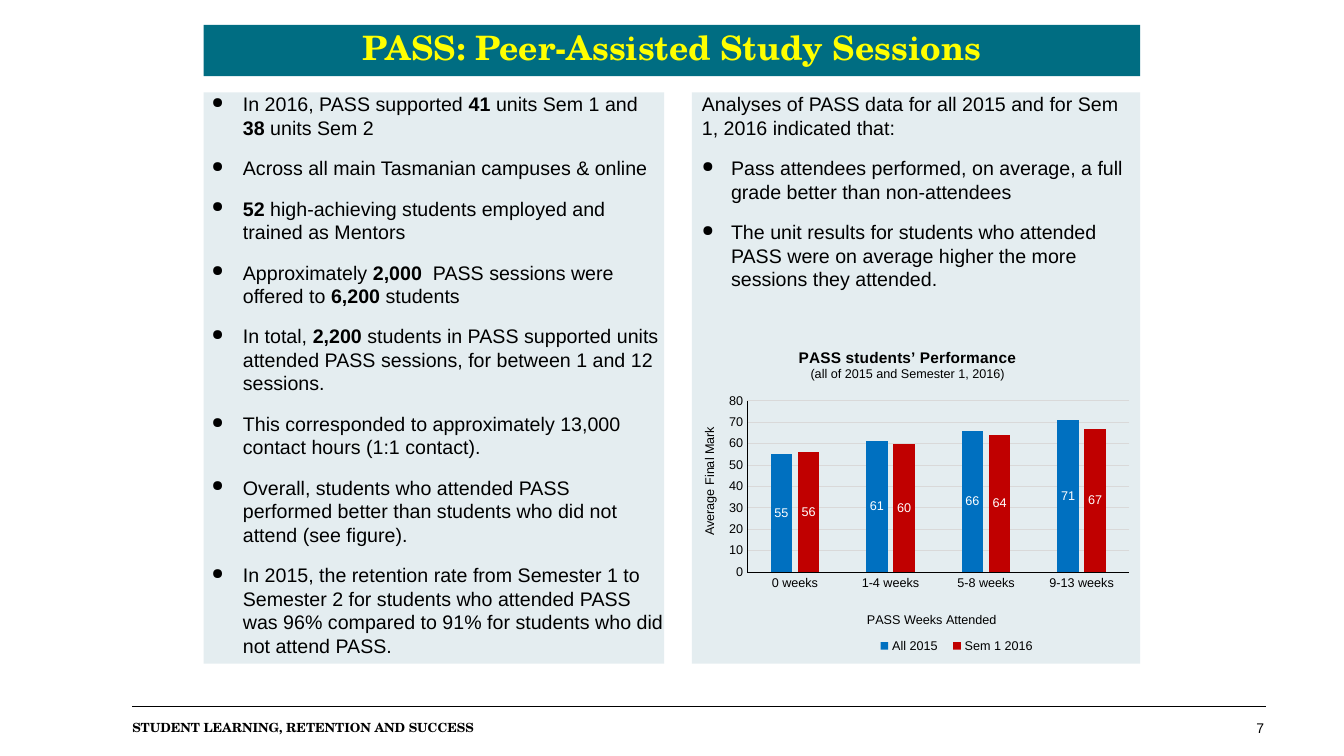
from lxml import etree
from pptx import Presentation
from pptx.chart.data import CategoryChartData
from pptx.dml.color import RGBColor
from pptx.enum import chart as ch, shapes, text
from pptx.oxml import parse_xml
from pptx.oxml.ns import nsdecls, qn
from pptx.util import Pt

TITLE = "PASS: Peer-Assisted Study Sessions"
# Bold parts stand between asterisks; a vertical tab is a line break.
LEFT = [
    "In 2016, PASS supported *41* units Sem 1 and \v*38* units Sem 2",
    "Across all main Tasmanian campuses & online",
    "*52* high-achieving students employed and trained as Mentors",
    "Approximately *2,000*  PASS sessions were offered to *6,200* students",
    "In total, *2,200* students in PASS supported units attended PASS sessions, "
    "for between 1 and 12 sessions.",
    "This corresponded to approximately 13,000 contact hours (1:1 contact).",
    "Overall, students who attended PASS \vperformed better than students who did not "
    "attend (see figure).",
    "In 2015, the retention rate from Semester 1 to Semester 2 for students who attended "
    "PASS was 96% compared to 91% for students who did not attend PASS.",
]
INTRO = "Analyses of PASS data for all 2015 and for Sem 1, 2016 indicated that:"
RIGHT = [
    "Pass attendees performed, on average, a full grade better than non-attendees",
    "The unit results for students who attended PASS were on average higher the more "
    "sessions they attended.",
]
FOOTER, PAGE = "STUDENT LEARNING, RETENTION AND SUCCESS", "7"
CHART_TITLE = ("PASS students’ Performance", "(all of 2015 and Semester 1, 2016)")
X_TITLE, Y_TITLE = "PASS Weeks Attended", "Average Final Mark"
WEEKS = ["0 weeks", "1-4 weeks", "5-8 weeks", "9-13 weeks"]
MARKS = {"All 2015": (55, 61, 66, 71), "Sem 1 2016": (56, 60, 64, 67)}

THEME = {
    "sans": "Arial", "serif": "TeX Gyre Schola",
    "black": "000000", "white": "FFFFFF", "yellow": "FFFF00", "teal": "006D82",
    "panel": "E4EDF0", "grid": "D9D9D9", "bars": ("0070C0", "C00000"),
    "title": 24, "body": 14, "chart_title": 11, "page": 10, "small": 9,
}
SLIDE_W, SLIDE_H = 960, 540
LEFT_X, RIGHT_X, EDGE = 145.5, 494.2, 814.4
PANEL_TOP, PANEL_H, LEFT_W = 66, 408, 329
RULE_X, RULE_END, RULE_Y = 94.5, 904.5, 504.5
CHART_BOX = (486, 236, 329, 239.8)
# Shares of the chart's width and height: left, top, then width and height
LAYOUTS = {"plot": (0.145, 0.21, 0.83, 0.51), "legend": (0.41, 0.9, 0.38, 0.08),
           "title": (0.25, 0.04), "x": (0.4, 0.83), "y": (0.04, 0.28)}


def color(name):
    return RGBColor.from_string(THEME.get(name, name))


def style(font, size="small", ink="black", face="sans", bold=False):
    values = {"name": THEME[face], "size": Pt(THEME[size]), "bold": bold}
    for key, value in values.items():
        setattr(font, key, value)
    font.color.rgb = color(ink)


def outline(line, ink, width=0.75):
    line.color.rgb = color(ink)
    line.width = Pt(width)


def box(slide, x, y, w, h, fill=None, anchor=text.MSO_ANCHOR.TOP):
    """Add a text area without margins, filled if a colour is given."""
    area = [Pt(v) for v in (x, y, w, h)]
    if fill:
        sp = slide.shapes.add_shape(shapes.MSO_SHAPE.RECTANGLE, *area)
        sp.shadow.inherit = False
        sp.fill.solid()
        sp.fill.fore_color.rgb = color(fill)
        sp.line.fill.background()
    else:
        sp = slide.shapes.add_textbox(*area)
    tf = sp.text_frame
    values = {"word_wrap": True, "vertical_anchor": anchor, "margin_left": 0,
              "margin_right": 0, "margin_top": 0, "margin_bottom": 0}
    for key, value in values.items():
        setattr(tf, key, value)
    return tf


def write(p, words, align=text.PP_ALIGN.LEFT, **look):
    p.alignment = align
    for i, part in enumerate(words.split("*")):
        for j, piece in enumerate(part.split("\v")):
            if j:
                p.add_line_break()
            if piece:
                r = p.add_run()
                r.text = piece
                style(r.font, **{"bold": i % 2 == 1, **look})


def write_panel(tf, items, hang, intro=None):
    """Fill a panel with bullets, after an unbulleted paragraph if there is one."""
    for i, item in enumerate(([intro] if intro else []) + items):
        p = tf.paragraphs[0] if i == 0 else tf.add_paragraph()
        bulleted = item is not intro
        p.space_before = Pt(12 if i else 0)
        pPr = p._p.get_or_add_pPr()
        pPr.set("marL", str(Pt(28 if bulleted else 7.2)))
        pPr.set("indent", str(Pt(-hang if bulleted else 0)))
        if bulleted:
            etree.SubElement(pPr, qn("a:buSzPct")).set("val", "78000")
            etree.SubElement(pPr, qn("a:buChar")).set("char", "●")
        write(p, item, size="body")


def place(el, key, after=None):
    """Give a chart part a manual layout, behind its child named by after."""
    for old in el.findall(qn("c:layout")):
        el.remove(old)
    tags = ["xMode", "yMode"] + ["x", "y", "w", "h"][:len(LAYOUTS[key])]
    values = ["edge", "edge", *LAYOUTS[key]]
    if key == "plot":
        tags, values = ["layoutTarget"] + tags, ["inner"] + values
    inner = "".join(f'<c:{t} val="{v}"/>' for t, v in zip(tags, values))
    layout = parse_xml(f'<c:layout {nsdecls("c")}><c:manualLayout>{inner}'
                       '</c:manualLayout></c:layout>')
    if after:
        el.find(qn(after)).addnext(layout)
    else:
        el.insert(0, layout)


def add_marks_chart(slide):
    data = CategoryChartData()
    data.categories = WEEKS
    for name, marks in MARKS.items():
        data.add_series(name, marks)
    chart = slide.shapes.add_chart(ch.XL_CHART_TYPE.COLUMN_CLUSTERED,
                                   *[Pt(v) for v in CHART_BOX], data).chart
    style(chart.font)
    center = text.PP_ALIGN.CENTER

    tf = chart.chart_title.text_frame
    write(tf.paragraphs[0], CHART_TITLE[0], center, size="chart_title", bold=True)
    write(tf.add_paragraph(), CHART_TITLE[1], center)
    chart.chart_title.include_in_layout = False
    place(chart.chart_title._element, "title", "c:tx")

    axes = {"x": (chart.category_axis, X_TITLE), "y": (chart.value_axis, Y_TITLE)}
    for key, (axis, words) in axes.items():
        tf = axis.axis_title.text_frame
        write(tf.paragraphs[0], words, center)
        if key == "y":
            tf._txBody.bodyPr.set("rot", "-5400000")
            tf._txBody.bodyPr.set("vert", "horz")
        place(axis.axis_title._element, key, "c:tx")
        axis.major_tick_mark = axis.minor_tick_mark = ch.XL_TICK_MARK.NONE
        style(axis.tick_labels.font)
        outline(axis.format.line, "black")
    marks_axis = chart.value_axis
    for key, value in {"minimum_scale": 0, "maximum_scale": 80, "major_unit": 10}.items():
        setattr(marks_axis, key, value)
    outline(marks_axis.major_gridlines.format.line, "grid")

    chart.has_legend = True
    chart.legend.position = ch.XL_LEGEND_POSITION.BOTTOM
    chart.legend.include_in_layout = False
    style(chart.legend.font)
    place(chart.legend._element, "legend", "c:legendPos")

    plot = chart.plots[0]
    plot.gap_width, plot.overlap, plot.vary_by_categories = 219, -27, False
    place(plot._element.getparent(), "plot")
    for series, fill in zip(plot.series, THEME["bars"]):
        series.format.fill.solid()
        series.format.fill.fore_color.rgb = color(fill)
        labels = series.data_labels
        labels.show_value = True
        labels.position = ch.XL_LABEL_POSITION.CENTER
        style(labels.font, ink="white")


def main():
    prs = Presentation()
    prs.slide_width, prs.slide_height = Pt(SLIDE_W), Pt(SLIDE_H)
    slide = prs.slides.add_slide(prs.slide_layouts[6])

    rule = slide.shapes.add_connector(shapes.MSO_CONNECTOR.STRAIGHT, Pt(RULE_X), Pt(RULE_Y),
                                      Pt(RULE_END), Pt(RULE_Y))
    outline(rule.line, "black", 0.5)
    etree.SubElement(rule._element.spPr, qn("a:effectLst"))

    tf = box(slide, LEFT_X, 17.7, EDGE - LEFT_X, 36.7, "teal", text.MSO_ANCHOR.MIDDLE)
    tf.paragraphs[0].line_spacing = Pt(24)
    write(tf.paragraphs[0], TITLE, text.PP_ALIGN.CENTER, size="title", ink="yellow",
          face="serif", bold=True)

    write_panel(box(slide, LEFT_X, PANEL_TOP, LEFT_W, PANEL_H, "panel"), LEFT, 22.3)
    write_panel(box(slide, RIGHT_X, PANEL_TOP, EDGE - RIGHT_X, PANEL_H, "panel"),
                RIGHT, 20.9, INTRO)
    add_marks_chart(slide)

    write(box(slide, RULE_X, 514.4, 744.5, 15).paragraphs[0], FOOTER, face="serif", bold=True)
    write(box(slide, 865.5, 514, 37.4, 16).paragraphs[0], PAGE, text.PP_ALIGN.RIGHT, size="page")
    prs.save("out.pptx")


if __name__ == "__main__":
    main()
